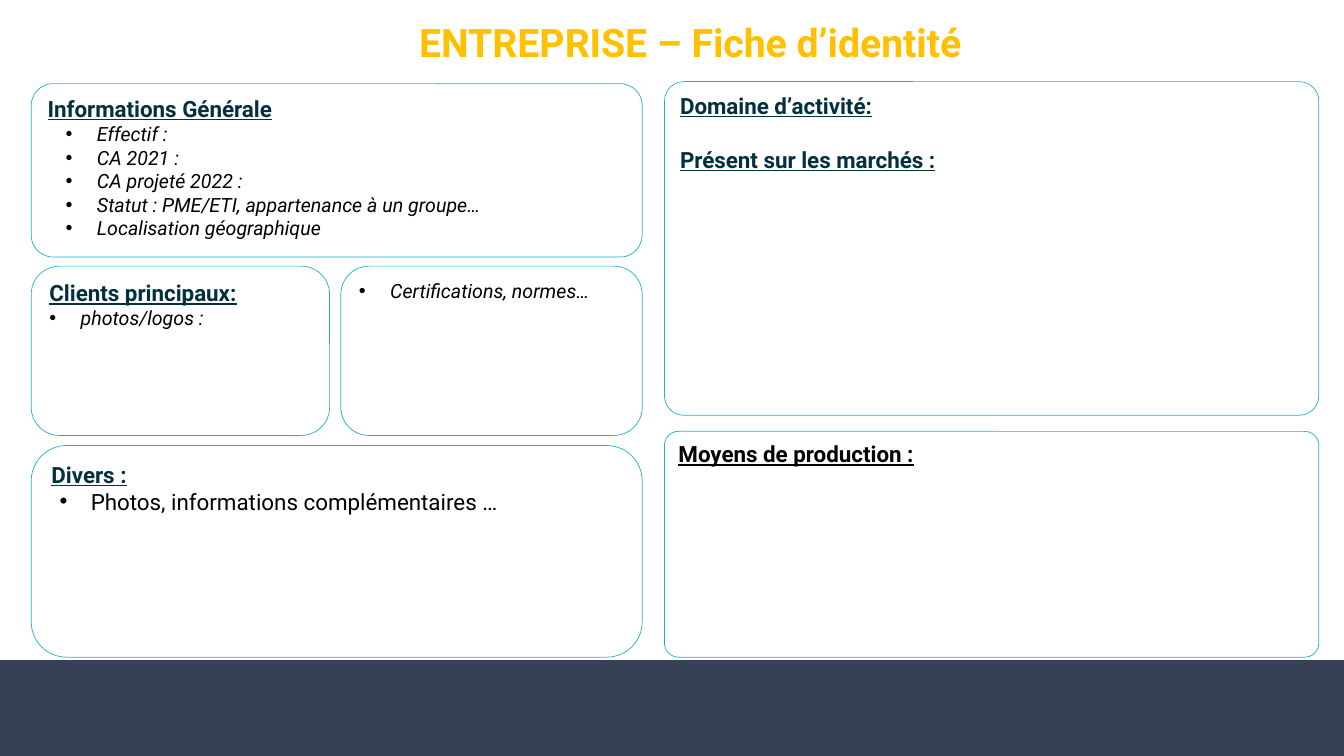
from dataclasses import dataclass

from lxml import etree
from pptx import Presentation
from pptx.dml.color import RGBColor
from pptx.enum.shapes import MSO_SHAPE
from pptx.enum.text import MSO_ANCHOR, PP_ALIGN
from pptx.oxml.ns import qn
from pptx.util import Inches, Pt

RECTANGLE = MSO_SHAPE.RECTANGLE
ROUNDED = MSO_SHAPE.ROUNDED_RECTANGLE
LEFT, CENTER = PP_ALIGN.LEFT, PP_ALIGN.CENTER
TOP, MIDDLE = MSO_ANCHOR.TOP, MSO_ANCHOR.MIDDLE


@dataclass(frozen=True)
class Theme:
    font: str = "Roboto"
    title: str = "FFC000"
    heading: str = "02303E"
    body: str = "000000"
    border: str = "21B2C9"
    card: str = "FFFFFF"
    band: str = "364157"
    title_size: int = 28
    heading_size: int = 16
    detail_size: int = 14
    border_width: float = 0.5


THEME = Theme()
LEFT_COLUMN, LEFT_WIDTH = 0.31, 6.06
RIGHT_COLUMN, RIGHT_WIDTH = 6.59, 6.49
MIDDLE_ROW, MIDDLE_HEIGHT = 2.64, 1.68
DEFAULT_ROUNDING = 0.1667
HANGING = 0.31


def set_bullet(paragraph, margin):
    properties = paragraph._p.get_or_add_pPr()
    properties.set("marL", str(Inches(margin)))
    properties.set("indent", str(-Inches(HANGING)))
    etree.SubElement(properties, qn("a:buFont")).set("typeface", "Arial")
    etree.SubElement(properties, qn("a:buChar")).set("char", "•")


def write(frame, text, *, size, color, bold=False, italic=False, underline=False,
          align=LEFT, bullet_margin=None, level=0, space_before=0):
    """Fill the frame's first paragraph, or add one when it is already used."""
    first = frame.paragraphs[0]
    paragraph = frame.add_paragraph() if first.runs else first
    paragraph.alignment = align
    paragraph.level = level
    paragraph.space_before = Pt(space_before)
    if bullet_margin is not None:
        set_bullet(paragraph, bullet_margin)
    run = paragraph.add_run()
    run.text = text
    font = run.font
    font.name, font.size = THEME.font, Pt(size)
    font.bold, font.italic, font.underline = bold, italic, underline
    font.color.rgb = RGBColor.from_string(color)


def write_heading(frame, text, color=THEME.heading, space_before=0):
    write(frame, text, size=THEME.heading_size, color=color, bold=True,
          underline=True, space_before=space_before)


def write_detail(frame, text, margin=HANGING, level=0):
    write(frame, text, size=THEME.detail_size, color=THEME.body, italic=True,
          bullet_margin=margin, level=level)


def add_panel(slide, kind, left, top, width, height, fill):
    panel = slide.shapes.add_shape(
        kind, Inches(left), Inches(top), Inches(width), Inches(height))
    panel.shadow.inherit = False
    panel.fill.solid()
    panel.fill.fore_color.rgb = RGBColor.from_string(fill)
    return panel


def add_card(slide, left, top, width, height, rounding=DEFAULT_ROUNDING):
    """Add an outlined rounded card and return its text frame."""
    card = add_panel(slide, ROUNDED, left, top, width, height, THEME.card)
    card.adjustments[0] = rounding
    card.line.color.rgb = RGBColor.from_string(THEME.border)
    card.line.width = Pt(THEME.border_width)
    card.text_frame.word_wrap = True
    card.text_frame.vertical_anchor = TOP
    return card.text_frame


def add_title(slide, text):
    title = slide.shapes.title
    title.left, title.top = Inches(2.03), Inches(0.13)
    title.width, title.height = Inches(9.63), Inches(0.58)
    title.text_frame.vertical_anchor = MIDDLE
    write(title.text_frame, text, size=THEME.title_size, color=THEME.title,
          bold=True, align=CENTER)


def main():
    deck = Presentation()
    deck.slide_width, deck.slide_height = Inches(13.33), Inches(7.5)
    slide = deck.slides.add_slide(deck.slide_layouts[5])

    footer = add_panel(slide, RECTANGLE, 0, 6.55, 13.33, 0.95, THEME.band)
    footer.line.fill.background()
    add_title(slide, "ENTREPRISE – Fiche d’identité")

    general = add_card(slide, LEFT_COLUMN, 0.83, LEFT_WIDTH, 1.72, 0.127)
    write_heading(general, "Informations Générale")
    for detail in ("Effectif :", "CA 2021 :", "CA projeté 2022 :",
                   "Statut : PME/ETI, appartenance à un groupe…",
                   "Localisation géographique"):
        write_detail(general, detail, margin=0.49, level=1)

    clients = add_card(slide, LEFT_COLUMN, MIDDLE_ROW, 2.96, MIDDLE_HEIGHT)
    write_heading(clients, "Clients principaux:")
    write_detail(clients, "photos/logos :")

    certifications = add_card(slide, 3.38, MIDDLE_ROW, 2.99, MIDDLE_HEIGHT)
    write_detail(certifications, "Certifications, normes…")

    others = add_card(slide, LEFT_COLUMN, 4.42, LEFT_WIDTH, 2.1)
    write_heading(others, "Divers :")
    write(others, "Photos, informations complémentaires …", size=THEME.heading_size,
          color=THEME.body, bullet_margin=0.39, level=1)

    activity = add_card(slide, RIGHT_COLUMN, 0.81, RIGHT_WIDTH, 3.31, 0.058)
    write_heading(activity, "Domaine d’activité:")
    write_heading(activity, "Présent sur les marchés :", space_before=19)

    production = add_card(slide, RIGHT_COLUMN, 4.28, RIGHT_WIDTH, 2.24, 0.062)
    write_heading(production, "Moyens de production :", color=THEME.body)

    deck.save("out.pptx")


if __name__ == "__main__":
    main()
